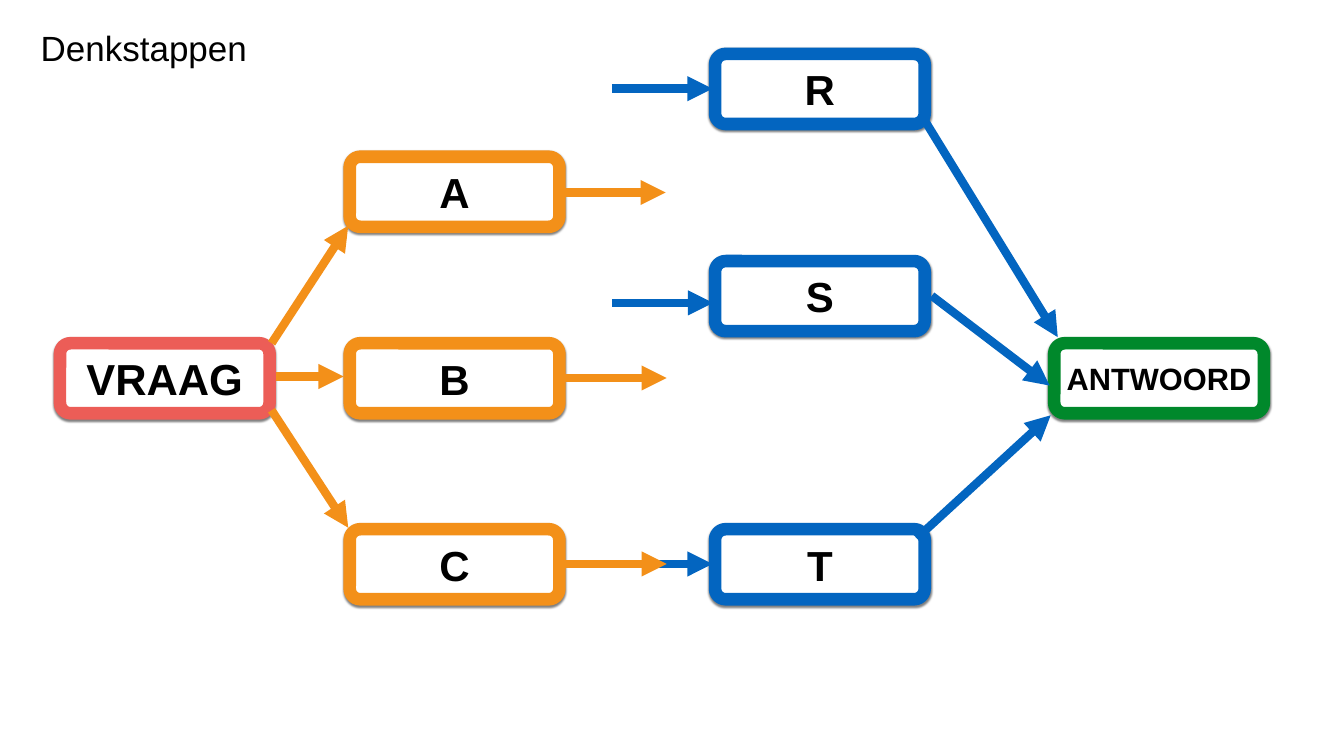
"""Build the Denkstappen slide: a question leading through steps to an answer."""
import pptx
import pptx.util
import pptx.dml.color
import pptx.enum.shapes
import pptx.enum.text
import pptx.oxml
import pptx.oxml.ns

Inches = pptx.util.Inches
RGBColor = pptx.dml.color.RGBColor
WHITE = RGBColor(0xFF, 0xFF, 0xFF)
BLACK = RGBColor(0x00, 0x00, 0x00)
RED = RGBColor(0xEC, 0x5D, 0x57)
GREEN = RGBColor(0x00, 0x88, 0x2B)
ORANGE = RGBColor(0xF3, 0x90, 0x19)
BLUE = RGBColor(0x03, 0x65, 0xC0)

BOX_WIDTH, BOX_HEIGHT = 4.16, 1.39
TITLE = "Denkstappen"
COLUMNS = [
    (1.19, RED, 62, [("VRAAG", 6.81)]),
    (20.92, GREEN, 44, [("ANTWOORD", 6.81)]),
    (6.94, ORANGE, 60, [("A", 3.11), ("B", 6.81), ("C", 10.5)]),
    (14.19, BLUE, 60, [("S", 5.18), ("R", 1.07), ("T", 10.5)]),
]
ARROWS = [
    (ORANGE, (5.39, 6.81), (6.91, 4.48)),
    (ORANGE, (5.39, 8.14), (6.91, 10.47)),
    (ORANGE, (5.48, 7.47), (6.82, 7.47)),
    (BLUE, (18.35, 2.39), (20.99, 6.69)),
    (BLUE, (18.19, 10.68), (20.85, 8.24)),
    (BLUE, (18.49, 5.87), (20.83, 7.65)),
    (BLUE, (12.14, 1.76), (14.14, 1.76)),
    (ORANGE, (11.22, 7.5), (13.23, 7.5)),
    (ORANGE, (11.21, 3.82), (13.21, 3.82)),
    (BLUE, (12.13, 11.19), (14.14, 11.19)),
    (BLUE, (12.15, 6.01), (14.15, 6.01)),
    (ORANGE, (11.22, 11.19), (13.23, 11.19)),
]
NAMESPACE = pptx.oxml.ns.nsdecls("a")
EFFECTS = f"<a:effectLst {NAMESPACE}/>"
SHADOW = (
    f'<a:outerShdw {NAMESPACE} blurRad="38100" dist="25400" dir="5400000" rotWithShape="0">'
    '<a:srgbClr val="000000"><a:alpha val="50000"/></a:srgbClr></a:outerShdw>'
)
ARROWHEAD = f'<a:tailEnd {NAMESPACE} type="triangle"/>'


def write_text(shape, text, *, size, bold=False, wrap=True):
    frame = shape.text_frame
    frame.margin_left = frame.margin_right = frame.margin_top = frame.margin_bottom = 0
    frame.vertical_anchor = pptx.enum.text.MSO_ANCHOR.MIDDLE
    frame.auto_size = pptx.enum.text.MSO_AUTO_SIZE.NONE
    frame.word_wrap = wrap
    para = frame.paragraphs[0]
    para.alignment = pptx.enum.text.PP_ALIGN.CENTER
    span = para.add_run()
    span.text = text
    span.font.name = "Arial"
    span.font.size = pptx.util.Pt(size)
    span.font.bold = bold
    span.font.color.rgb = BLACK


def fill_white(shape):
    shape.fill.solid()
    shape.fill.fore_color.rgb = WHITE


def set_line(shape, color, width):
    shape.line.color.rgb = color
    shape.line.width = pptx.util.Pt(width)


def add_title(page):
    title = page.shapes.title
    title.left, title.top = Inches(0.71), Inches(0.47)
    title.width, title.height = Inches(4.29), Inches(0.94)
    fill_white(title)
    write_text(title, TITLE, size=50, wrap=False)


def add_box(page, text, left, top, color, size):
    box = page.shapes.add_shape(
        pptx.enum.shapes.MSO_SHAPE.ROUNDED_RECTANGLE,
        Inches(left), Inches(top), Inches(BOX_WIDTH), Inches(BOX_HEIGHT))
    box.adjustments[0] = 0.15
    fill_white(box)
    set_line(box, color, 18)
    box.shadow.inherit = False
    effects = box.element.spPr.find(pptx.oxml.ns.qn("a:effectLst"))
    effects.append(pptx.oxml.parse_xml(SHADOW))
    write_text(box, text, size=size, bold=True)


def add_arrow(page, color, start, end):
    arrow = page.shapes.add_connector(
        pptx.enum.shapes.MSO_CONNECTOR.STRAIGHT,
        *(Inches(value) for value in start + end))
    set_line(arrow, color, 12)
    arrow.line._get_or_add_ln().append(pptx.oxml.parse_xml(ARROWHEAD))
    arrow.element.spPr.append(pptx.oxml.parse_xml(EFFECTS))


def main():
    deck = pptx.Presentation()
    deck.slide_width, deck.slide_height = Inches(26.67), Inches(15)
    page = deck.slides.add_slide(deck.slide_layouts[5])
    add_title(page)
    for left, color, size, steps in COLUMNS:
        for text, top in steps:
            add_box(page, text, left, top, color, size)
    for color, start, end in ARROWS:
        add_arrow(page, color, start, end)
    deck.save("out.pptx")


if __name__ == "__main__":
    main()
